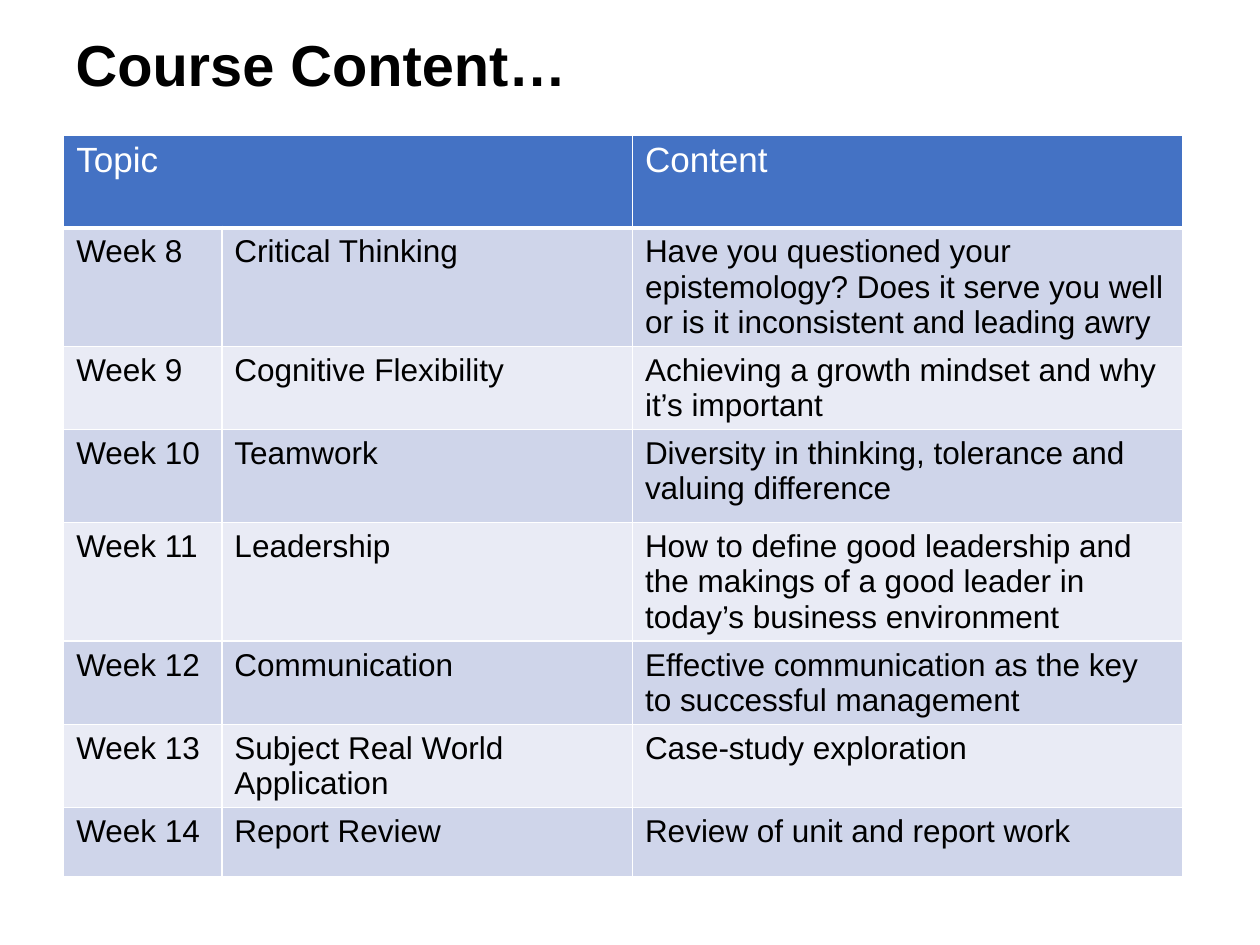
import pptx
import pptx.util
import pptx.dml.color
import pptx.enum.text
import pptx.oxml
import pptx.oxml.ns

Pt = pptx.util.Pt

COLOURS = {
    "black": "000000",
    "white": "FFFFFF",
    "header": "4472C4",
    "odd": "CFD5EA",
    "even": "E9EBF5",
}
HEADING = "Course Content…"
COLUMN_HEADS = ("Topic", "", "Content")
WEEKS = [
    ("Week 8", "Critical Thinking",
     "Have you questioned your epistemology? Does it serve you well or is it inconsistent and leading awry"),
    ("Week 9", "Cognitive Flexibility", "Achieving a growth mindset and why it’s important"),
    ("Week 10", "Teamwork", "Diversity in thinking, tolerance and valuing difference"),
    ("Week 11", "Leadership",
     "How to define good leadership and the makings of a good leader in today’s business environment"),
    ("Week 12", "Communication", "Effective communication as the key to successful management"),
    ("Week 13", "Subject Real World Application", "Case-study exploration"),
    ("Week 14", "Report Review", "Review of unit and report work"),
]
COLUMN_WIDTHS = (90.4, 234.6, 314.4)
TALL_ROW, SHORT_ROW = 53.2, 39.5
TALL_ROWS = (0, 3)


def rgb(colour):
    return pptx.dml.color.RGBColor.from_string(COLOURS[colour])


def write(frame, text, size, colour="black", bold=False, line_spacing=None):
    paragraph = frame.paragraphs[0]
    paragraph.alignment = pptx.enum.text.PP_ALIGN.LEFT
    if line_spacing:
        paragraph.line_spacing = line_spacing
    run = paragraph.add_run()
    run.text = text
    run.font.name = "Arial"
    run.font.size = Pt(size)
    run.font.bold = bold
    run.font.color.rgb = rgb(colour)


def set_borders(cell, bottom):
    properties = cell._tc.get_or_add_tcPr()
    widths = {"lnL": 1, "lnR": 1, "lnT": 1, "lnB": bottom}
    for position, (side, width) in enumerate(widths.items()):
        border = pptx.oxml.parse_xml(
            f'<a:{side} {pptx.oxml.ns.nsdecls("a")} w="{Pt(width)}"><a:solidFill>'
            f'<a:srgbClr val="{COLOURS["white"]}"/></a:solidFill></a:{side}>')
        properties.insert(position, border)


def add_heading(slide):
    heading = slide.shapes.title
    heading.left, heading.top, heading.width, heading.height = Pt(36), Pt(0.7), Pt(648.7), Pt(76.3)
    heading.text_frame.word_wrap = True
    heading.text_frame.vertical_anchor = pptx.enum.text.MSO_ANCHOR.MIDDLE
    write(heading.text_frame, HEADING, 33, bold=True, line_spacing=0.9)


def add_schedule(slide):
    rows = [COLUMN_HEADS, *WEEKS]
    heights = [TALL_ROW if index in TALL_ROWS else SHORT_ROW for index in range(len(rows))]
    schedule = slide.shapes.add_table(
        len(rows), len(COLUMN_WIDTHS), Pt(36.4), Pt(77.1),
        Pt(sum(COLUMN_WIDTHS)), Pt(sum(heights))).table
    for column, width in zip(schedule.columns, COLUMN_WIDTHS):
        column.width = Pt(width)
    schedule.cell(0, 0).merge(schedule.cell(0, 1))
    for index, (texts, height) in enumerate(zip(rows, heights)):
        schedule.rows[index].height = Pt(height)
        is_header = index == 0
        fill = "header" if is_header else ("even", "odd")[index % 2]
        for column, text in enumerate(texts):
            cell = schedule.cell(index, column)
            cell.fill.solid()
            cell.fill.fore_color.rgb = rgb(fill)
            set_borders(cell, bottom=3 if is_header else 1)
            if text:
                write(cell.text_frame, text, 20 if is_header else 18,
                      colour="white" if is_header else "black")


def main():
    presentation = pptx.Presentation()
    presentation.slide_width, presentation.slide_height = Pt(720), Pt(540)
    slide = presentation.slides.add_slide(presentation.slide_layouts[5])
    add_heading(slide)
    add_schedule(slide)
    presentation.save("out.pptx")


if __name__ == "__main__":
    main()
